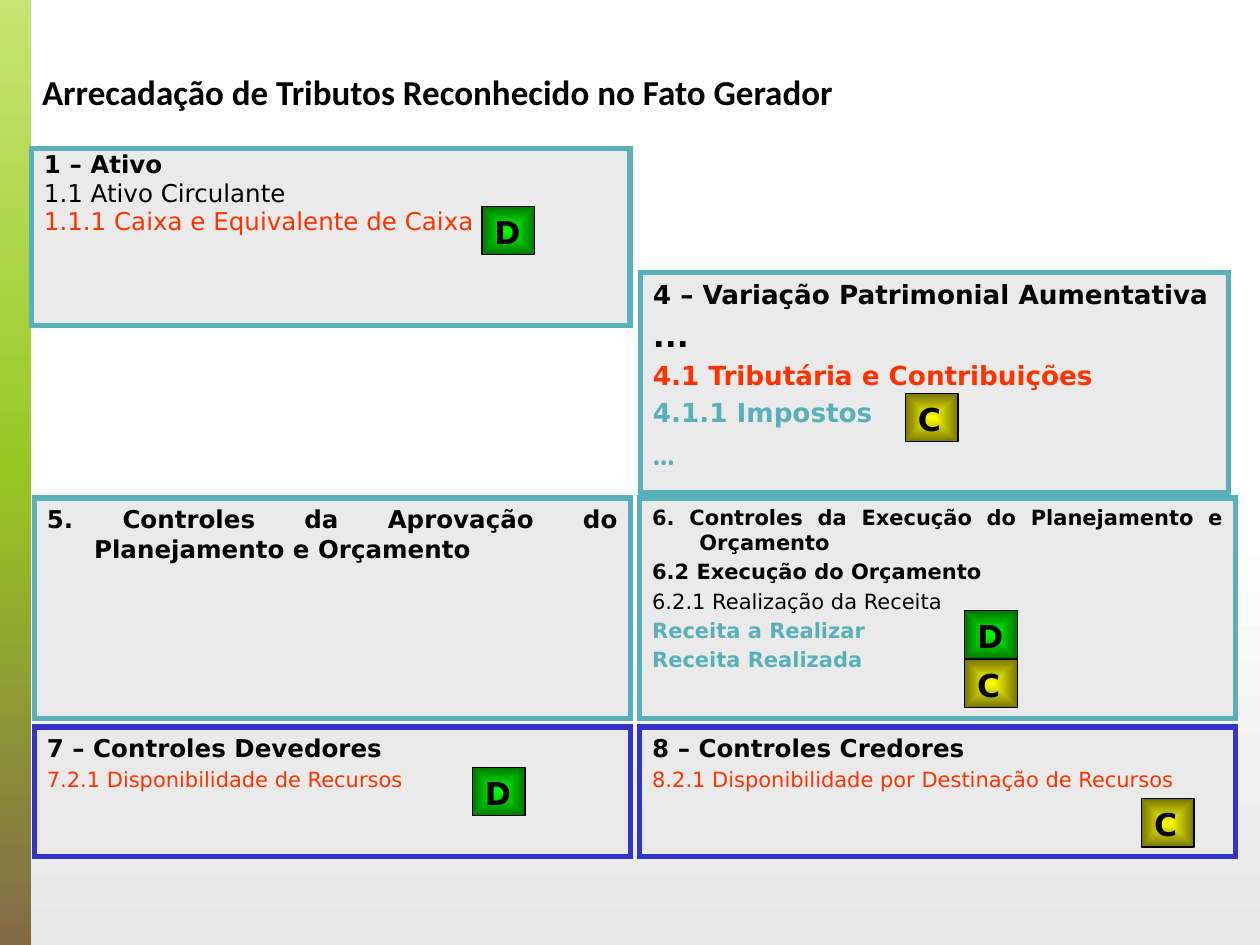
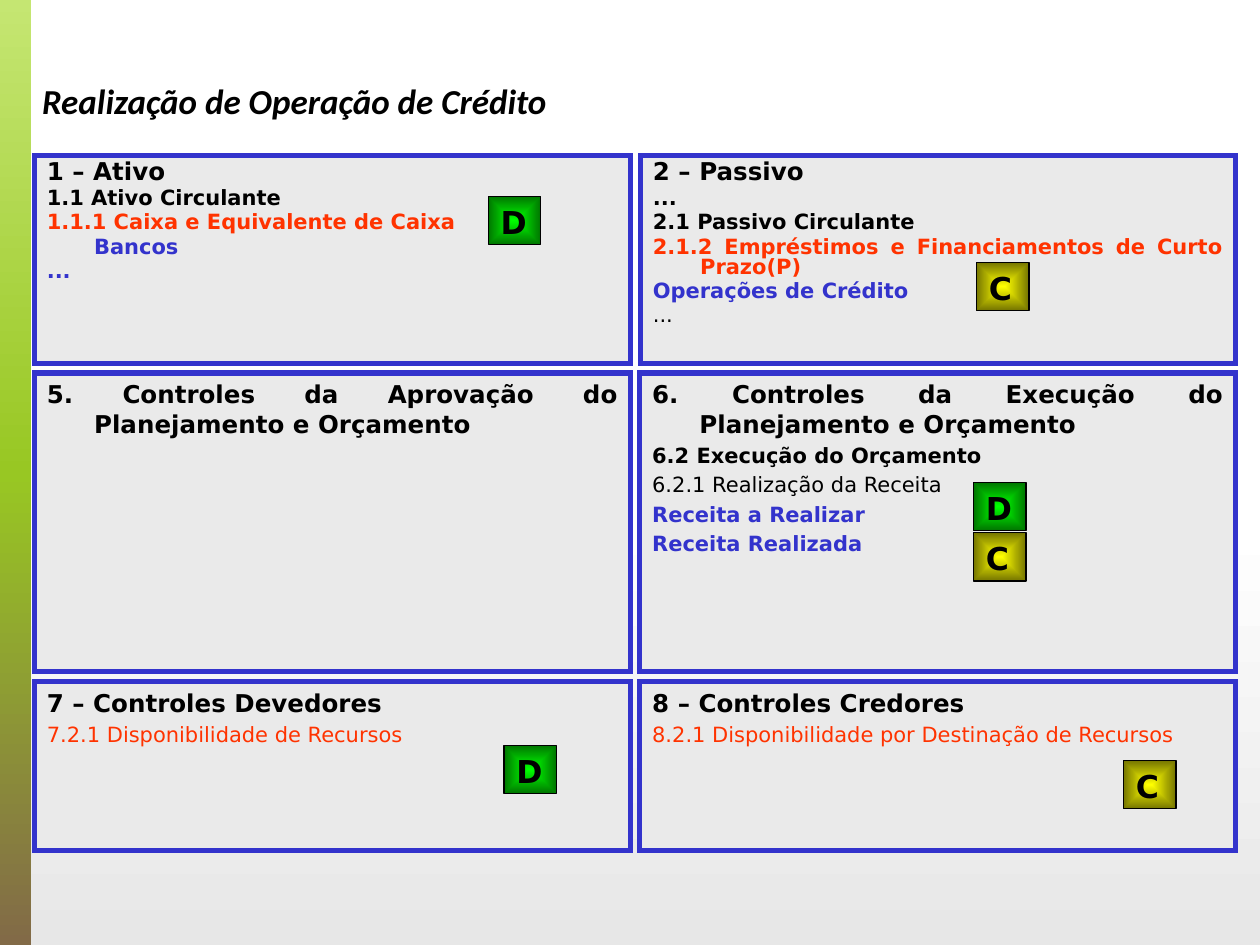
from lxml.etree import SubElement
from pptx import Presentation
from pptx.dml.color import RGBColor
from pptx.enum.shapes import MSO_SHAPE
from pptx.enum.text import MSO_ANCHOR, MSO_AUTO_SIZE, PP_ALIGN
from pptx.oxml.ns import qn
from pptx.util import Pt

COLORS = {
    "black": "000000", "red": "FF3300", "panel": "EAEAEA",
    "teal": "59B0B9", "blue": "3333CC",
}
BACKGROUND = [(0, "FFFFFF"), (55, "FFFFFF"), (100, "E7E7E7")]
SIDEBAR = [(0, "C5E672"), (50, "98C723"), (100, "826A47")]
BADGES = {"D": [(0, "00FF00"), (100, "007600")],
          "C": [(0, "FFFF00"), (100, "767600")]}
FONT = "DejaVu Sans"
HANGING = 27
LEFT, RIGHT, WIDTH = 19.7, 365.6, 340.5


def apply_gradient(owner, fill, stops, from_center=False):
    """Fill with stops running downwards, or outwards from the center."""
    fill.gradient()
    gradient = owner.find(".//" + qn("a:gradFill"))
    for child in list(gradient):
        gradient.remove(child)
    stop_list = SubElement(gradient, qn("a:gsLst"))
    for position, color in stops:
        stop = SubElement(stop_list, qn("a:gs"), pos=str(position * 1000))
        SubElement(stop, qn("a:srgbClr"), val=color)
    if from_center:
        shade = SubElement(gradient, qn("a:path"), path="shape")
        SubElement(shade, qn("a:fillToRect"), l="50000", t="50000", r="50000", b="50000")
    else:
        SubElement(gradient, qn("a:lin"), ang="5400000", scaled="0")


def write_text(frame, text, size=12, color="black", bold=True, italic=False, font=FONT,
               align=PP_ALIGN.JUSTIFY, spacing=None, margin=0, indent=0, before=0):
    """Write a paragraph, using the empty first one when there is one."""
    paragraph = frame.paragraphs[0]
    if paragraph.runs:
        paragraph = frame.add_paragraph()
    paragraph.alignment = align
    paragraph.line_spacing = spacing
    paragraph.space_before = Pt(before)
    properties = paragraph._p.get_or_add_pPr()
    properties.set("marL", str(Pt(margin)))
    properties.set("indent", str(Pt(indent)))
    run = paragraph.add_run()
    run.text = text
    run.font.name = font
    run.font.size = Pt(size)
    run.font.bold = bold
    run.font.italic = italic
    run.font.color.rgb = RGBColor.from_string(COLORS[color])


# Lines that both slides show; "accent" takes the border color of the panel
approval = [("5. Controles da Aprovação do Planejamento e Orçamento", {"size": 14})]
execution_title = "6. Controles da Execução do Planejamento e Orçamento"
execution = [
    ("6.2 Execução do Orçamento", {}),
    ("6.2.1 Realização da Receita", {"bold": False}),
    ("Receita a Realizar", {"color": "accent"}),
    ("Receita Realizada", {"color": "accent"}),
]
debtors = [
    ("7 – Controles Devedores", {"size": 14}),
    ("7.2.1 Disponibilidade de Recursos", {"color": "red", "bold": False}),
]
creditors = [
    ("8 – Controles Credores", {"size": 14}),
    ("8.2.1 Disponibilidade por Destinação de Recursos", {"color": "red", "bold": False}),
]

# Panels: left, top, width, height, border, line spacing, lines
# Badges: letter, left, top
slides = [
    {
        "title": "Arrecadação de Tributos Reconhecido no Fato Gerador",
        "title_top": 36.5, "italic": False,
        "panels": [
            (18, 85, 342, 101, "teal", 0.8, [
                ("1 – Ativo", {"size": 14}),
                ("1.1 Ativo Circulante", {"size": 14, "bold": False}),
                ("1.1.1 Caixa e Equivalente de Caixa",
                 {"size": 14, "color": "red", "bold": False}),
            ]),
            (LEFT, 284.5, WIDTH, 126, "teal", None, approval),
            (RIGHT, 284.5, WIDTH, 126, "teal", None, [(execution_title, {})] + execution),
            (366, 155.5, 336, 126, "teal", None, [
                ("4 – Variação Patrimonial Aumentativa", {"size": 15}),
                ("...", {"size": 18}),
                ("4.1 Tributária e Contribuições", {"size": 15, "color": "red"}),
                ("4.1.1 Impostos", {"size": 15, "color": "accent"}),
                ("...", {"size": 18, "color": "accent", "font": "Cambria"}),
            ]),
            (LEFT, 415.5, WIDTH, 74, "blue", None, debtors),
            (RIGHT, 415.5, WIDTH, 74, "blue", None, creditors),
        ],
        "badges": [("D", 275.5, 118), ("D", 270, 438.5), ("C", 652.4, 456.5),
                   ("D", 551.3, 349), ("C", 551.3, 376.8), ("C", 517.5, 225)],
    },
    {
        "title": "Realização de Operação de Crédito",
        "title_top": 42, "italic": True,
        "panels": [
            (LEFT, 88.8, WIDTH, 119, "blue", 0.8, [
                ("1 – Ativo", {"size": 14}),
                ("1.1 Ativo Circulante", {}),
                ("1.1.1 Caixa e Equivalente de Caixa", {"color": "red"}),
                ("Bancos", {"color": "accent", "indent": 0}),
                ("...", {"color": "accent"}),
            ]),
            (366, 88.8, 340, 119, "blue", 0.8, [
                ("2 – Passivo", {"size": 14}),
                ("...", {}),
                ("2.1 Passivo Circulante", {}),
                ("2.1.2 Empréstimos e Financiamentos de Curto Prazo(P)", {"color": "red"}),
                ("Operações de Crédito", {"color": "accent"}),
                ("...", {"bold": False}),
            ]),
            (LEFT, 213.2, WIDTH, 170.5, "blue", None, approval),
            (RIGHT, 213.2, WIDTH, 170.5, "blue", None,
             [(execution_title, {"size": 14})] + execution),
            (LEFT, 389.5, WIDTH, 96.5, "blue", None, debtors),
            (RIGHT, 389.5, WIDTH, 96.5, "blue", None, creditors),
        ],
        "badges": [("D", 279, 112.25), ("C", 558, 150), ("D", 556.3, 275.75),
                   ("C", 556.3, 304.5), ("D", 288, 426), ("C", 642, 434.75)],
    },
]

presentation = Presentation()
presentation.slide_width, presentation.slide_height = Pt(720), Pt(540)
master = presentation.slide_master
title_only = presentation.slide_layouts[5]

# Shared background
apply_gradient(master.element, master.background.fill, BACKGROUND)

for content in slides:
    slide = presentation.slides.add_slide(title_only)

    # Sidebar
    sidebar = slide.shapes.add_shape(MSO_SHAPE.RECTANGLE, 0, 0, Pt(18), Pt(540))
    sidebar.shadow.inherit = False
    sidebar.line.fill.background()
    apply_gradient(sidebar.element, sidebar.fill, SIDEBAR)

    # Title
    title = slide.shapes.title
    title.left, title.top = Pt(16.8), Pt(content["title_top"])
    title.width, title.height = Pt(684), Pt(31.5)
    title.text_frame.vertical_anchor = MSO_ANCHOR.TOP
    title.text_frame.auto_size = MSO_AUTO_SIZE.NONE
    write_text(title.text_frame, content["title"], size=20, font="Calibri",
               italic=content["italic"], align=PP_ALIGN.LEFT)

    # Account panels
    for left, top, width, height, border, spacing, lines in content["panels"]:
        panel = slide.shapes.add_shape(
            MSO_SHAPE.RECTANGLE, Pt(left), Pt(top), Pt(width), Pt(height))
        panel.shadow.inherit = False
        panel.fill.solid()
        panel.fill.fore_color.rgb = RGBColor.from_string(COLORS["panel"])
        panel.line.color.rgb = RGBColor.from_string(COLORS[border])
        panel.line.width = Pt(3)
        SubElement(panel.element.spPr.find(qn("a:ln")), qn("a:miter"), lim="800000")
        panel.text_frame.word_wrap = True
        panel.text_frame.vertical_anchor = MSO_ANCHOR.TOP
        for text, changes in lines:
            style = {"size": 12, "margin": HANGING, "indent": -HANGING,
                     "spacing": spacing, **changes}
            if style.get("color") == "accent":
                style["color"] = border
            write_text(panel.text_frame, text, before=round(style["size"] * 0.2, 1), **style)

    # Debit and credit badges
    for letter, left, top in content["badges"]:
        badge = slide.shapes.add_shape(
            MSO_SHAPE.RECTANGLE, Pt(left), Pt(top), Pt(30), Pt(27.5))
        badge.shadow.inherit = False
        apply_gradient(badge.element, badge.fill, BADGES[letter], from_center=True)
        badge.line.color.rgb = RGBColor.from_string(COLORS["black"])
        badge.line.width = Pt(0.75)
        badge.text_frame.word_wrap = True
        badge.text_frame.auto_size = MSO_AUTO_SIZE.SHAPE_TO_FIT_TEXT
        badge.text_frame.vertical_anchor = MSO_ANCHOR.TOP
        write_text(badge.text_frame, letter, size=18)

presentation.save("out.pptx")
